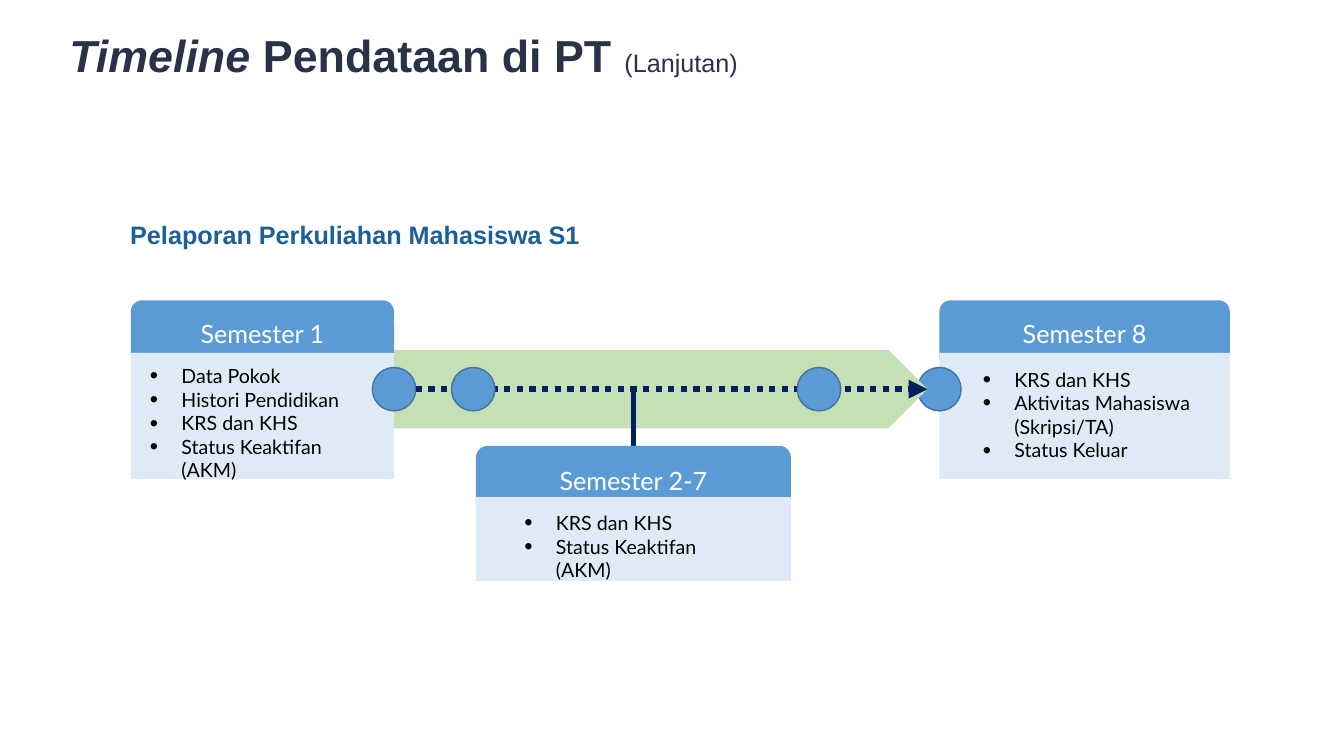
from lxml.etree import SubElement
from pptx import Presentation
from pptx.dml.color import RGBColor
from pptx.enum.dml import MSO_LINE
from pptx.enum.shapes import MSO_CONNECTOR, MSO_SHAPE as SHAPE
from pptx.enum.text import MSO_ANCHOR as ANCHOR, PP_ALIGN as ALIGN
from pptx.oxml.ns import qn
from pptx.util import Pt

BLUE, PALE, GREEN, NAVY = "5B9BD5", "DEEBF7", "C5E0B4", "002060"
OUTLINE, TITLE_INK, HEADING_INK = "43739E", "2A3249", "1D6097"
WHITE, BLACK = "FFFFFF", "000000"

TITLE = [("Timeline ", 32, True, True),
         ("Pendataan di PT ", 32, True, False),
         ("(Lanjutan)", 18, False, False)]
HEADING = "Pelaporan Perkuliahan Mahasiswa S1"
FIRST = {"name": "Semester 1", "at": (93.5, 214.5, 188), "header": 48,
         "body": (252, 90), "list": (100, 256.5, 168, 75),
         "items": ["Data Pokok", "Histori Pendidikan", "KRS dan KHS",
                   "Status Keaktifan (AKM)"]}
MIDDLE = {"name": "Semester 2-7", "at": (340, 318.5, 225), "header": 49.5,
          "body": (355, 60), "list": (367.5, 361.5, 170, 41),
          "items": ["KRS dan KHS", "Status Keaktifan (AKM)"]}
LAST = {"name": "Semester 8", "at": (671, 214.5, 207.5), "header": 48,
        "body": (252, 90), "list": (695, 259, 188, 75),
        "items": ["KRS dan KHS", "Aktivitas Mahasiswa (Skripsi/TA)",
                  "Status Keluar"]}
AXIS = 278
DOT = 31
BAND_HEIGHT = 56
BAND_END = 662.5
START = FIRST["at"][0] + FIRST["at"][2]
FINISH = LAST["at"][0]
STOPS = [338, 585]

deck = Presentation()
deck.slide_width, deck.slide_height = Pt(960), Pt(540)
page = deck.slides.add_slide(deck.slide_layouts[6])


def color(code):
    return RGBColor.from_string(code)


def style(span, size, face, ink, bold=False, italic=False):
    font = span.font
    font.size, font.name, font.bold, font.italic = Pt(size), face, bold, italic
    font.color.rgb = color(ink)


def add_box(kind, left, top, width, height, fill, line=None):
    box = page.shapes.add_shape(kind, Pt(left), Pt(top), Pt(width), Pt(height))
    box.shadow.inherit = False
    box.fill.solid()
    box.fill.fore_color.rgb = color(fill)
    if line:
        box.line.color.rgb = color(line)
        box.line.width = Pt(1)
    else:
        box.line.fill.background()
    return box


def add_text(left, top, width, height):
    frame = page.shapes.add_textbox(Pt(left), Pt(top), Pt(width), Pt(height)).text_frame
    frame.word_wrap = True
    return frame


def label(box, text, size, face, ink, align, bold=False):
    frame = box.text_frame
    frame.text = text
    frame.vertical_anchor = ANCHOR.MIDDLE
    para = frame.paragraphs[0]
    para.alignment = align
    style(para.runs[0], size, face, ink, bold)


def add_bullet(para):
    properties = para._p.get_or_add_pPr()
    properties.set("marL", str(Pt(22.5)))
    properties.set("indent", str(-Pt(22.5)))
    SubElement(properties, qn("a:buSzPct"), val="120000")
    SubElement(properties, qn("a:buFont"), typeface="Arial")
    SubElement(properties, qn("a:buChar"), char="•")


def add_card(card):
    left, top, width = card["at"]
    header = add_box(SHAPE.ROUNDED_RECTANGLE, left, top, width, card["header"], BLUE)
    label(header, card["name"], 18, "Lato", WHITE, ALIGN.CENTER)
    body_top, body_height = card["body"]
    add_box(SHAPE.RECTANGLE, left, body_top, width, body_height, PALE)
    frame = add_text(*card["list"])
    frame.text = "\n".join(card["items"])
    for para in frame.paragraphs:
        add_bullet(para)
        style(para.runs[0], 14, "Lato", BLACK)
    return header


def add_dot(center):
    add_box(SHAPE.OVAL, center - DOT / 2, AXIS - DOT / 2, DOT, DOT, BLUE, OUTLINE)


def add_line(x1, y1, x2, y2, width):
    line = page.shapes.add_connector(MSO_CONNECTOR.STRAIGHT, Pt(x1), Pt(y1), Pt(x2), Pt(y2))
    line.line.color.rgb = color(NAVY)
    line.line.width = Pt(width)
    SubElement(line._element.spPr, qn("a:effectLst"))
    return line


add_card(LAST)
add_card(FIRST)
add_dot(FINISH)

heading = add_box(SHAPE.ROUNDED_RECTANGLE, 84, 147.5, 372, 40, WHITE)
label(heading, HEADING, 18, "Arial", HEADING_INK, ALIGN.LEFT, True)

title = add_text(42.5, 19.5, 828, 44.5)
title.vertical_anchor = ANCHOR.MIDDLE
title.paragraphs[0].line_spacing = 0.9
for text, size, bold, italic in TITLE:
    span = title.paragraphs[0].add_run()
    span.text = text
    style(span, size, "Arial", TITLE_INK, bold, italic)

band = add_box(SHAPE.PENTAGON, START, AXIS - BAND_HEIGHT / 2,
               BAND_END - START, BAND_HEIGHT, GREEN)
add_dot(START)
arrow = add_line(START + DOT / 2, AXIS, BAND_END, AXIS, 4.5)
arrow.end_connect(band, 3)
arrow.line.dash_style = MSO_LINE.ROUND_DOT
SubElement(arrow.line._get_or_add_ln(), qn("a:tailEnd"), type="triangle")
for stop in STOPS:
    add_dot(stop)

branch = MIDDLE["at"][0] + MIDDLE["at"][2] / 2
stem = add_line(branch, AXIS + 2, branch, MIDDLE["at"][1], 3.75)
stem.end_connect(add_card(MIDDLE), 0)

deck.save("out.pptx")
